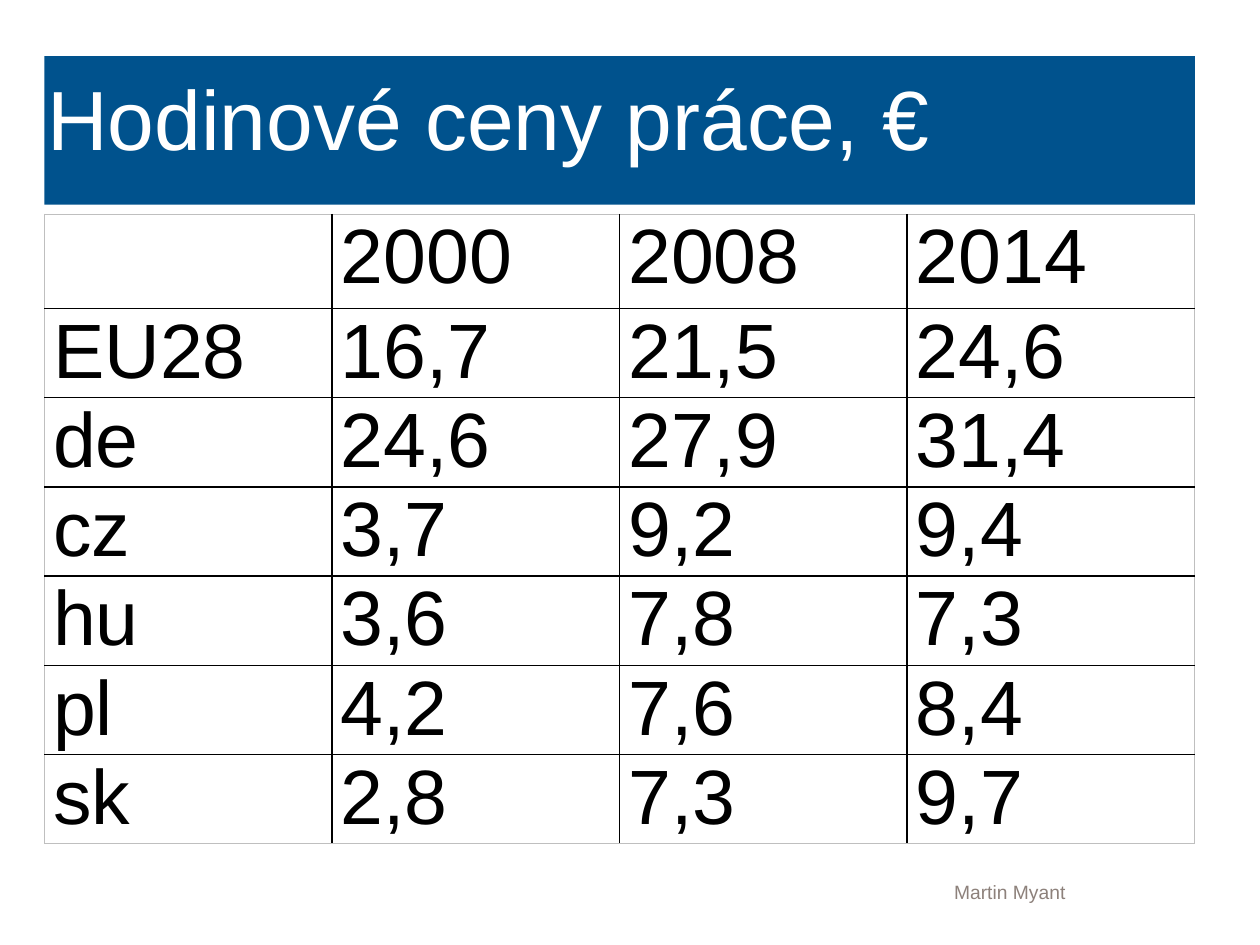
"""Build a one-slide deck with a table of hourly labour costs."""
from dataclasses import dataclass

from lxml import etree
from pptx import Presentation
from pptx.dml.color import RGBColor
from pptx.enum.text import MSO_ANCHOR, MSO_AUTO_SIZE, PP_ALIGN
from pptx.oxml.ns import qn
from pptx.util import Pt

TOP, BOTTOM = MSO_ANCHOR.TOP, MSO_ANCHOR.BOTTOM
LEFT, RIGHT = PP_ALIGN.LEFT, PP_ALIGN.RIGHT
NO_FIT = MSO_AUTO_SIZE.NONE


@dataclass(frozen=True)
class Theme:
    """Colours, type sizes and line widths of the deck."""
    font: str = "Arial"
    blue: str = "00528D"
    white: str = "FFFFFF"
    black: str = "000000"
    edge: str = "BFBFBF"
    grey: str = "8D817B"
    head: int = 48
    cell: int = 44
    foot: int = 11
    rule: float = 1
    hair: float = 0.5


class Deck:
    """Holds the theme and the current slide."""

    def __init__(self, theme):
        """Open a blank deck with one title slide."""
        self.theme = theme
        self.file = Presentation()
        self.file.slide_width, self.file.slide_height = Pt(720), Pt(540)
        self.slide = self.file.slides.add_slide(self.file.slide_layouts[5])

    def label(self, para, text, size, colour, align=LEFT):
        """Set and format the text of a paragraph."""
        para.text = text
        para.alignment = align
        para.font.size = Pt(size)
        for run in para.runs:
            run.font.name = self.theme.font
            run.font.size = Pt(size)
            run.font.color.rgb = RGBColor.from_string(colour)

    def frame(self, shape, anchor, side=0):
        """Set the margins and anchor of a shape's text."""
        frame = shape.text_frame
        frame.word_wrap = True
        frame.auto_size = NO_FIT
        frame.vertical_anchor = anchor
        frame.margin_left = frame.margin_right = Pt(side)
        frame.margin_top = frame.margin_bottom = 0
        return frame

    def title(self, text, left, top, width, height):
        """Fill the title placeholder as a coloured band."""
        shape = self.slide.shapes.title
        shape.left, shape.top = Pt(left), Pt(top)
        shape.width, shape.height = Pt(width), Pt(height)
        shape.fill.solid()
        shape.fill.fore_color.rgb = RGBColor.from_string(self.theme.blue)
        para = self.frame(shape, TOP, 1.5).paragraphs[0]
        self.label(para, text, self.theme.head, self.theme.white)
        para.line_spacing = 1.1

    def border(self, cell, side, outer):
        """Draw one border of a cell, lighter on the outer edge."""
        theme = self.theme
        width = theme.hair if outer else theme.rule
        line = etree.SubElement(cell._tc.get_or_add_tcPr(), qn("a:" + side), w=str(Pt(width)))
        fill = etree.SubElement(line, qn("a:solidFill"))
        etree.SubElement(fill, qn("a:srgbClr"), val=theme.edge if outer else theme.black)

    def table(self, rows, left, top, width, step):
        """Add a ruled table with equal columns and rows."""
        theme = self.theme
        high, wide = len(rows), len(rows[0])
        grid = self.slide.shapes.add_table(
            high, wide, Pt(left), Pt(top), Pt(width), Pt(step * high)).table
        grid.first_row = grid.horz_banding = False
        for y, row in enumerate(rows):
            for x, text in enumerate(row):
                cell = grid.cell(y, x)
                cell.margin_left = cell.margin_right = Pt(5)
                cell.margin_top = cell.margin_bottom = 0
                sides = {"lnL": x == 0, "lnR": x == wide - 1,
                         "lnT": y == 0, "lnB": y == high - 1}
                for side, outer in sides.items():
                    self.border(cell, side, outer)
                cell.fill.solid()
                cell.fill.fore_color.rgb = RGBColor.from_string(theme.white)
                self.label(cell.text_frame.paragraphs[0], text, theme.cell, theme.black)

    def footer(self, text, left, top, width, height):
        """Add a small line of text aligned to the right."""
        box = self.slide.shapes.add_textbox(Pt(left), Pt(top), Pt(width), Pt(height))
        para = self.frame(box, BOTTOM).paragraphs[0]
        self.label(para, text, self.theme.foot, self.theme.grey, RIGHT)


def main():
    """Build and save the slide."""
    costs = [
        ("", "2000", "2008", "2014"),
        ("EU28", "16,7", "21,5", "24,6"),
        ("de", "24,6", "27,9", "31,4"),
        ("cz", "3,7", "9,2", "9,4"),
        ("hu", "3,6", "7,8", "7,3"),
        ("pl", "4,2", "7,6", "8,4"),
        ("sk", "2,8", "7,3", "9,7"),
    ]
    left, width = 25.4, 657.4
    deck = Deck(Theme())
    deck.title("Hodinové ceny práce, €", left, 32, width, 85)
    deck.table(costs, left, 122.4, width, 51)
    deck.footer("Martin Myant", 252, 491, 357, 25)
    deck.file.save("out.pptx")


if __name__ == "__main__":
    main()
